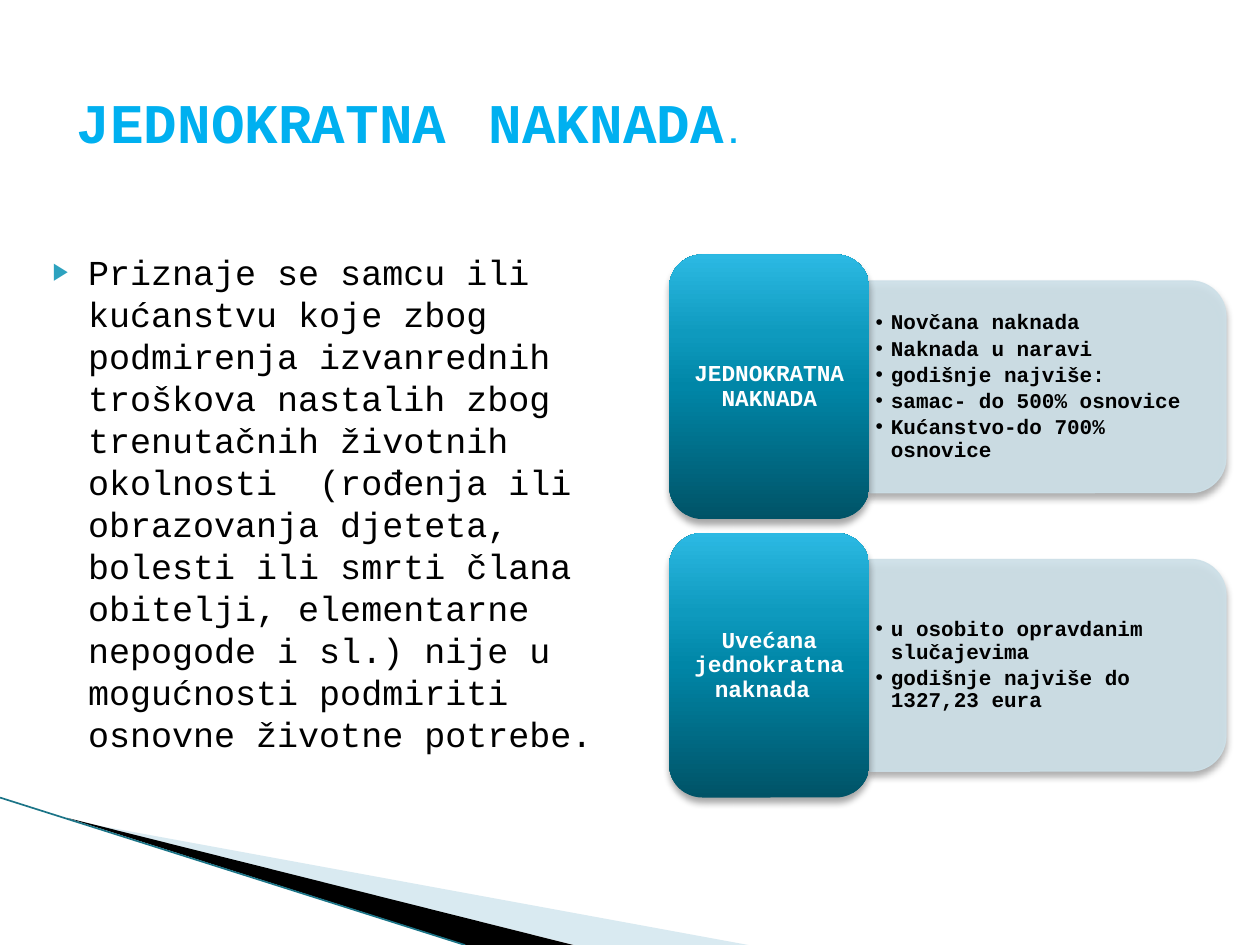
from lxml.etree import SubElement
from pptx import Presentation
from pptx.dml.color import RGBColor
from pptx.enum.shapes import MSO_CONNECTOR, MSO_SHAPE
from pptx.enum.text import MSO_ANCHOR, PP_ALIGN
from pptx.oxml.ns import qn
from pptx.util import Pt

PX = 9144  # 100 px to the inch
FONT = "Courier New"
STOPS = [(0, "005367"), (50, "0086A7"), (70, "0E9ABE"), (100, "2CB9E3")]
BODY = ("Priznaje se samcu ili kućanstvu koje zbog podmirenja izvanrednih "
        "troškova nastalih zbog trenutačnih životnih okolnosti  (rođenja ili "
        "obrazovanja djeteta, bolesti ili smrti člana obitelji, elementarne "
        "nepogode i sl.) nije u mogućnosti podmiriti osnovne životne potrebe.")
TITLE = [("JEDNOKRATNA", 32), (" ", 40), ("NAKNADA", 32), (".", 18)]
ROWS = [
    ("JEDNOKRATNA NAKNADA",
     ["Novčana naknada", "Naknada u naravi", "godišnje najviše:",
      "samac- do 500% osnovice", "Kućanstvo-do 700% osnovice"]),
    ("Uvećana jednokratna naknada ",
     ["u osobito opravdanim slučajevima",
      "godišnje najviše do 1327,23 eura"]),
]


def color(code):
    return RGBColor.from_string(code)


def scale(*vals):
    return [round(v * PX) for v in vals]


def add(node, tag, **attrs):
    return SubElement(node, qn(tag), {k: str(v) for k, v in attrs.items()})


def fade(fill, pct):
    """Make a solid fill partly see-through."""
    rgb = fill._xPr.find(".//" + qn("a:srgbClr"))
    add(rgb, "a:alpha", val=pct * 1000)


def shade(shape):
    """Give a shape a soft shadow below it."""
    shape.shadow.inherit = False
    fx = shape._element.spPr.find(qn("a:effectLst"))
    out = add(fx, "a:outerShdw", blurRad=Pt(4), dist=Pt(3), dir=5400000,
              algn="ctr", rotWithShape=0)
    add(add(out, "a:srgbClr", val="000000"), "a:alpha", val=35000)


def style(run, size, code, bold=True):
    run.font.name, run.font.size, run.font.bold = FONT, Pt(size), bold
    run.font.color.rgb = color(code)


def inset(frame, x, y):
    frame.word_wrap = True
    frame.margin_left = frame.margin_right = x * PX
    frame.margin_top = frame.margin_bottom = y * PX


def text_box(slide, box, x=10, y=5):
    frame = slide.shapes.add_textbox(*scale(*box)).text_frame
    inset(frame, x, y)
    return frame


def bullet(para, mark, left, hang, code=None, size=None):
    props = para._p.get_or_add_pPr()
    props.set("marL", str(left * PX))
    props.set("indent", str(-hang * PX))
    if code:
        add(add(props, "a:buClr"), "a:srgbClr", val=code)
    if size:
        add(props, "a:buSzPct", val=size * 1000)
    add(props, "a:buFont", typeface="Arial")
    add(props, "a:buChar", char=mark)


def wedge(slide, pts, code, alpha=100):
    form = slide.shapes.build_freeform(*pts[0], scale=PX)
    form.add_line_segments(pts[1:])
    shape = form.convert_to_shape()
    shape.shadow.inherit = False
    shape.fill.solid()
    shape.fill.fore_color.rgb = color(code)
    fade(shape.fill, alpha)
    shape.line.fill.background()


def corner(slide, x, y):
    """Slanted bands at the lower left, from the point x, y."""
    wedge(slide, [(x + 55, y + 18), (x + 594, y + 117), (x + 456, y + 117)],
          "A0CBDC", 40)
    wedge(slide, [(x + 53, y + 16), (x + 455, y + 117), (x + 370, y + 117)],
          "000000")
    line = slide.shapes.add_connector(
        MSO_CONNECTOR.STRAIGHT, *scale(x, y, x + 369, y + 117))
    line.line.color.rgb = color("1B7487")
    line.line.width = Pt(0.95)
    add(line._element.spPr, "a:effectLst")


def heading(slide, box):
    frame = text_box(slide, box)
    frame.vertical_anchor = MSO_ANCHOR.MIDDLE
    for text, size in TITLE:
        run = frame.paragraphs[0].add_run()
        run.text = text
        style(run, size, "00B0F0")


def body(slide, box):
    frame = text_box(slide, box)
    frame.text = BODY
    para = frame.paragraphs[0]
    bullet(para, "▶", 40, 28, "2DA2BF", 68)
    style(para.runs[0], 20, "000000", False)


def panel(slide, x, y, wide, high, items):
    """Pale tab, rounded on the right, with a bulleted list."""
    left, top = x + (wide - high) / 2, y + (high - wide) / 2
    tab = slide.shapes.add_shape(MSO_SHAPE.ROUND_2_SAME_RECTANGLE,
                                 *scale(left, top, high, wide))
    tab.rotation = 90
    tab.fill.solid()
    tab.fill.fore_color.rgb = color("CDE0E8")
    fade(tab.fill, 90)
    tab.line.color.rgb = color("CDE0E8")
    tab.line.width = Pt(0.75)
    fade(tab.line.fill, 90)
    shade(tab)
    frame = text_box(slide, (x, y + 8, wide - 8, high - 16), 5, 3)
    frame.vertical_anchor = MSO_ANCHOR.MIDDLE
    frame.text = "\n".join(items)
    for para in frame.paragraphs:
        bullet(para, "•", 12, 12)
        para.line_spacing, para.space_after = 0.9, Pt(2)
        style(para.runs[0], 12, "000000")


def card(slide, box, text):
    """Blue card with a centred label."""
    shape = slide.shapes.add_shape(MSO_SHAPE.ROUNDED_RECTANGLE, *scale(*box))
    shape.fill.gradient()
    shape.fill.gradient_angle = 90
    stops = shape._element.spPr.find(".//" + qn("a:gsLst"))
    stops[:] = []
    for pos, code in STOPS:
        add(add(stops, "a:gs", pos=pos * 1000), "a:srgbClr", val=code)
    shape.line.fill.background()
    shade(shape)
    frame = shape.text_frame
    inset(frame, 5, 3)
    frame.vertical_anchor = MSO_ANCHOR.MIDDLE
    frame.text = text
    para = frame.paragraphs[0]
    para.alignment, para.line_spacing = PP_ALIGN.CENTER, 0.9
    style(para.runs[0], 13, "FFFFFF")


def row(slide, x, y, wide, high, label, items):
    side, gap = 159, 21
    panel(slide, x + side, y + gap, wide - side, high - 2 * gap, items)
    card(slide, (x, y, side, high), label)


def main():
    deck = Presentation()
    deck.slide_width, deck.slide_height = scale(1000, 750)
    slide = deck.slides.add_slide(deck.slide_layouts[6])
    corner(slide, 0, 633)
    body(slide, (20, 194, 505, 495))
    heading(slide, (51, 29, 900, 125))
    # Rows of label card and list
    for i, (label, items) in enumerate(ROWS):
        row(slide, 531, 202 + i * 221, 442, 210, label, items)
    deck.save("out.pptx")


if __name__ == "__main__":
    main()
